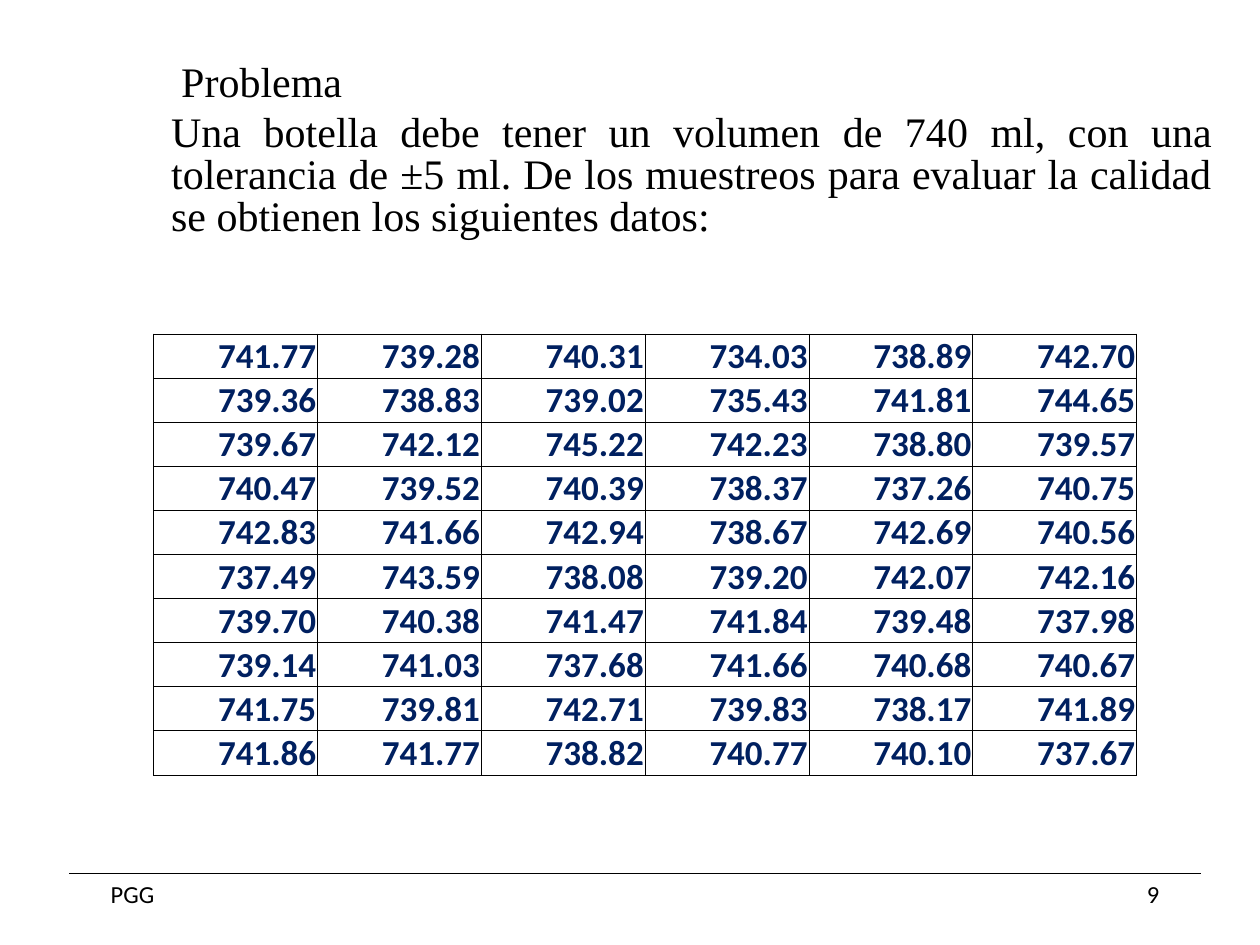
import pptx
import pptx.util
import pptx.dml.color
import pptx.enum.shapes
import pptx.enum.text
import pptx.oxml
import pptx.oxml.ns
from dataclasses import dataclass

Inches, Pt = pptx.util.Inches, pptx.util.Pt
Align = pptx.enum.text.PP_ALIGN


@dataclass(frozen=True)
class Theme:
    ink: str = "000000"
    navy: str = "002060"
    serif: str = "Times New Roman"
    sans: str = "Calibri"
    body: int = 24
    data: int = 20
    footer: int = 14


theme = Theme()


def add_run(p, text, font, size, color, bold=False):
    r = p.add_run()
    r.text = text
    r.font.name, r.font.size, r.font.bold = font, Pt(size), bold
    r.font.color.rgb = pptx.dml.color.RGBColor.from_string(color)


def add_border(cell, side):
    """Draw one thin solid border; side is L, R, T or B."""
    ln = pptx.oxml.parse_xml(
        f'<a:ln{side} {pptx.oxml.ns.nsdecls("a")} w="{Pt(0.5)}"><a:solidFill>'
        f'<a:srgbClr val="{theme.ink}"/></a:solidFill></a:ln{side}>')
    cell._tc.get_or_add_tcPr().append(ln)


prs = pptx.Presentation()
prs.slide_width, prs.slide_height = Inches(10), Inches(7.5)
s = prs.slides.add_slide(prs.slide_layouts[6])

# Footer: rule, author and page number
footer_top = Inches(6.93)
rule = s.shapes.add_connector(pptx.enum.shapes.MSO_CONNECTOR.STRAIGHT,
                              Inches(0.55), footer_top, Inches(9.53), footer_top)
rule.line.width = Pt(0.75)
rule.line.color.rgb = pptx.dml.color.RGBColor.from_string(theme.ink)
rule._element.spPr.append(
    pptx.oxml.parse_xml(f'<a:effectLst {pptx.oxml.ns.nsdecls("a")}/>'))

for left, text, align in ((0.78, "PGG", Align.LEFT), (7.11, "9", Align.RIGHT)):
    tf = s.shapes.add_textbox(Inches(left), footer_top, Inches(2.19), Inches(0.34)).text_frame
    tf.word_wrap = True
    p = tf.paragraphs[0]
    p.alignment = align
    add_run(p, text, theme.sans, theme.footer, theme.ink)

# Problem statement
tf = s.shapes.add_textbox(Inches(0.59), Inches(0.46), Inches(9.13), Inches(1.5)).text_frame
tf.word_wrap = True
statement = (
    ("Problema", Align.LEFT, 0.75, 0),
    ("Una botella debe tener un volumen de 740 ml, con una tolerancia de ±5 ml. "
     "De los muestreos para evaluar la calidad se obtienen los siguientes datos:",
     Align.JUSTIFY, 0.67, 0.2 * theme.body),
)
for i, (text, align, indent, before) in enumerate(statement):
    p = tf.add_paragraph() if i else tf.paragraphs[0]
    p._p.get_or_add_pPr().set("marL", str(Inches(indent)))
    p.alignment, p.line_spacing, p.space_before = align, 0.83, Pt(before)
    add_run(p, text, theme.serif, theme.body, theme.ink)

# Sampled volumes in ml
volumes = [row.split() for row in (
    "741.77 739.28 740.31 734.03 738.89 742.70",
    "739.36 738.83 739.02 735.43 741.81 744.65",
    "739.67 742.12 745.22 742.23 738.80 739.57",
    "740.47 739.52 740.39 738.37 737.26 740.75",
    "742.83 741.66 742.94 738.67 742.69 740.56",
    "737.49 743.59 738.08 739.20 742.07 742.16",
    "739.70 740.38 741.47 741.84 739.48 737.98",
    "739.14 741.03 737.68 741.66 740.68 740.67",
    "741.75 739.81 742.71 739.83 738.17 741.89",
    "741.86 741.77 738.82 740.77 740.10 737.67",
)]
rows, cols = len(volumes), len(volumes[0])
table = s.shapes.add_table(rows, cols, Inches(1.22), Inches(2.65),
                           Inches(1.3 * cols), Inches(0.35 * rows)).table
table.first_row = table.horz_banding = False
for cell, volume in zip(table.iter_cells(), sum(volumes, [])):
    cell.margin_left = cell.margin_right = cell.margin_top = Inches(0.01)
    cell.margin_bottom = 0
    cell.vertical_anchor = pptx.enum.text.MSO_ANCHOR.BOTTOM
    for side in "LRTB":
        add_border(cell, side)
    cell.fill.background()
    p = cell.text_frame.paragraphs[0]
    p.alignment = Align.RIGHT
    add_run(p, volume, theme.sans, theme.data, theme.navy, bold=True)

prs.save("out.pptx")
